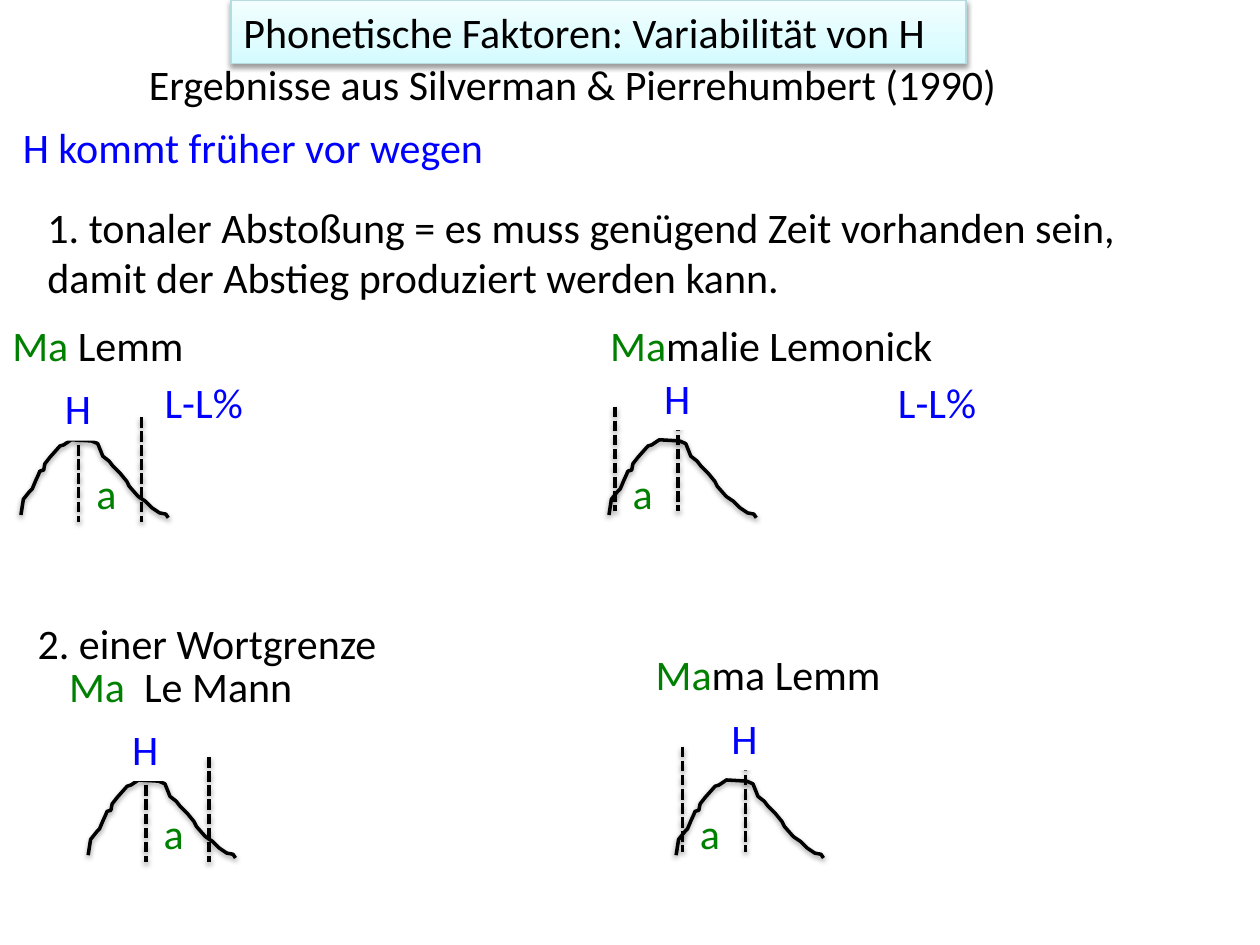
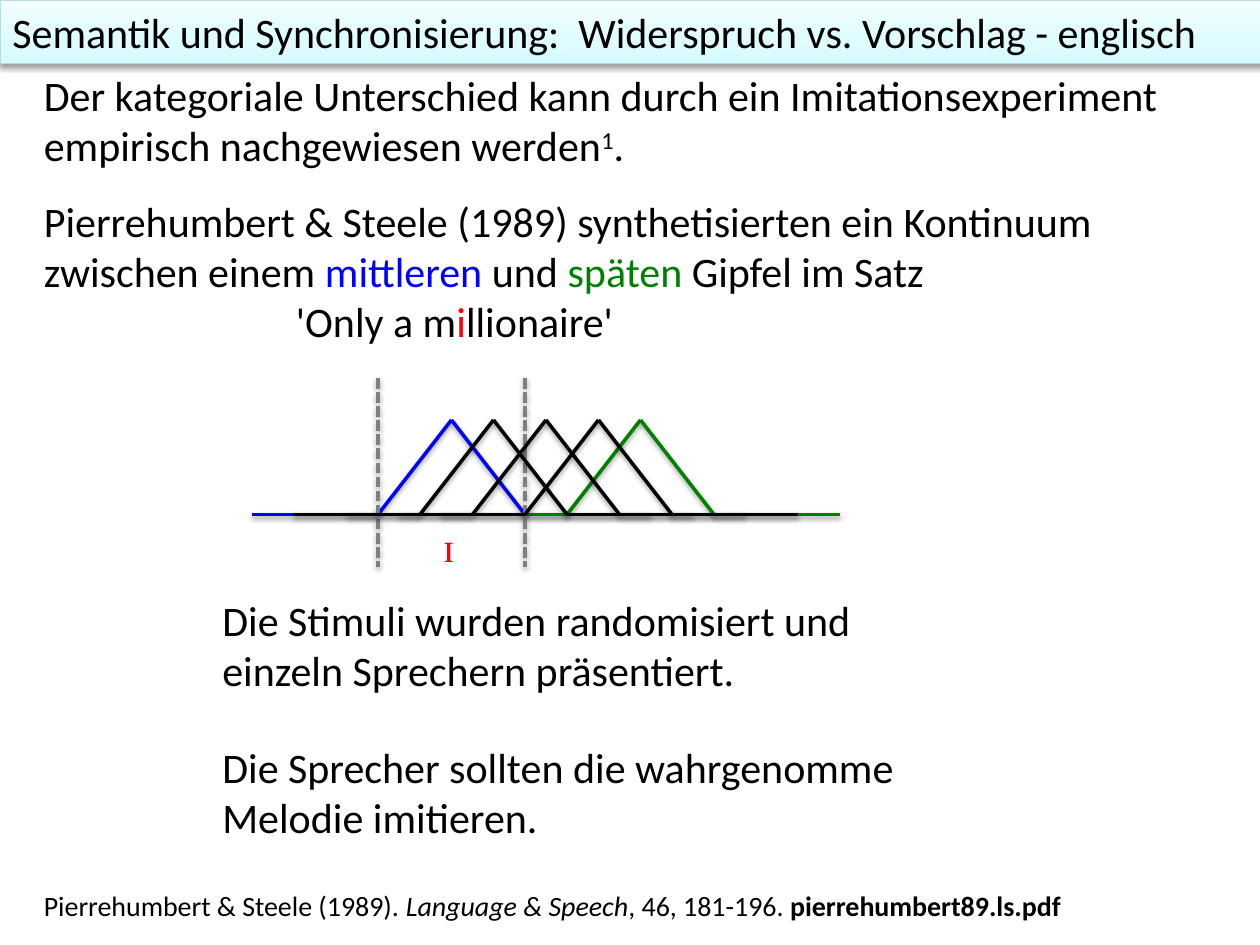
from dataclasses import dataclass

import pptx
import pptx.dml.color
import pptx.enum.dml
import pptx.enum.shapes
import pptx.enum.text
import pptx.oxml
import pptx.oxml.ns
import pptx.util

Pt = pptx.util.Pt
DRAWING_NS = pptx.oxml.ns.nsdecls("a")


@dataclass(frozen=True)
class Theme:
    black: str = "000000"
    white: str = "FFFFFF"
    blue: str = "0000FF"
    green: str = "008000"
    red: str = "FF0000"
    grey: str = "808080"
    band_edge: str = "B6DCDF"
    band_stops: tuple = ((0, "D3FBFF"), (35, "DFFCFF"), (100, "F2FEFF"))
    font: str = "Calibri"
    phonetic_font: str = "Times New Roman"
    body: int = 24
    source: int = 16
    stroke: float = 2
    band_stroke: float = 0.75


THEME = Theme()
LINE_HEIGHT = 36.5
BASELINE, PEAK_LEVEL = 294, 240
PITCH_CURVE = (
    (0, 43), (1.4, 34), (5, 29.5), (6.5, 28), (8.6, 23), (10, 20), (10.8, 18),
    (13, 17.3), (13.7, 13.7), (16.6, 10), (22.3, 3.6), (24.5, 2.9), (28.8, 0),
    (40.3, 0.7), (43.9, 2.2), (46.8, 9.4), (50.4, 12.2), (52.6, 15.1),
    (56.9, 19.4), (60.5, 23.8), (61.9, 26.6), (67, 32.4), (71.3, 35.3),
    (74.9, 38.9), (79.2, 41.8), (82.8, 42.5), (84.2, 44.6),
)


def rgb(code):
    return pptx.dml.color.RGBColor.from_string(code)


class Deck:
    def __init__(self, theme):
        self.theme = theme
        self.presentation = pptx.Presentation()
        self.presentation.slide_width = Pt(720)
        self.presentation.slide_height = Pt(540)
        self.slide = None

    def new_slide(self):
        blank = self.presentation.slide_layouts[6]
        self.slide = self.presentation.slides.add_slide(blank)

    def set_wording(self, shape, paragraphs, color=None, size=None, font=None):
        frame = shape.text_frame
        frame.word_wrap = True
        frame.vertical_anchor = pptx.enum.text.MSO_ANCHOR.TOP
        for index, runs in enumerate(paragraphs):
            paragraph = frame.add_paragraph() if index else frame.paragraphs[0]
            paragraph.alignment = pptx.enum.text.PP_ALIGN.LEFT
            paragraph.font.name = font or self.theme.font
            paragraph.font.size = Pt(size or self.theme.body)
            paragraph.font.color.rgb = rgb(color or self.theme.black)
            for part in [runs] if isinstance(runs, str) else runs:
                wording, look = (part, {}) if isinstance(part, str) else part
                run = paragraph.add_run()
                run.text = wording
                if "color" in look:
                    run.font.color.rgb = rgb(look["color"])
                if "italic" in look:
                    run.font.italic = True
                if "bold" in look:
                    run.font.bold = True
                if "raised" in look:
                    run._r.get_or_add_rPr().set("baseline", "30000")
        return frame

    def text(self, left, top, width, *paragraphs, lines=1, **style):
        height = LINE_HEIGHT + 29 * (lines - 1)
        box = self.slide.shapes.add_textbox(Pt(left), Pt(top), Pt(width), Pt(height))
        return self.set_wording(box, paragraphs, **style)

    def rectangle(self, left, top, width, height):
        return self.slide.shapes.add_shape(
            pptx.enum.shapes.MSO_SHAPE.RECTANGLE,
            Pt(left), Pt(top), Pt(width), Pt(height))

    def cast_shadow(self, shape):
        shape._element.spPr.append(pptx.oxml.parse_xml(
            f'<a:effectLst {DRAWING_NS}><a:outerShdw blurRad="{Pt(3.1)}" dist="{Pt(1.6)}" '
            f'dir="5400000" rotWithShape="0"><a:srgbClr val="{self.theme.black}">'
            '<a:alpha val="38000"/></a:srgbClr></a:outerShdw></a:effectLst>'))

    def title_band(self, left, width, wording):
        band = self.rectangle(left, 0, width, LINE_HEIGHT)
        stops = "".join(
            f'<a:gs pos="{share * 1000}"><a:srgbClr val="{color}"/></a:gs>'
            for share, color in self.theme.band_stops)
        band._element.spPr.append(pptx.oxml.parse_xml(
            f'<a:gradFill {DRAWING_NS} rotWithShape="1"><a:gsLst>{stops}</a:gsLst>'
            '<a:lin ang="16200000" scaled="0"/></a:gradFill>'))
        band.line.color.rgb = rgb(self.theme.band_edge)
        band.line.width = Pt(self.theme.band_stroke)
        self.cast_shadow(band)
        self.set_wording(band, [wording])

    def tone(self, left, top, wording):
        plate = self.rectangle(left, top, 30, LINE_HEIGHT)
        plate.shadow.inherit = False
        plate.fill.solid()
        plate.fill.fore_color.rgb = rgb(self.theme.white)
        plate.line.fill.background()
        self.set_wording(plate, [wording], color=self.theme.blue)

    def line(self, start, end, color=None, dashed=False):
        stroke = self.slide.shapes.add_connector(
            pptx.enum.shapes.MSO_CONNECTOR.STRAIGHT,
            *(Pt(value) for value in (*start, *end)))
        stroke.line.color.rgb = rgb(color or self.theme.black)
        stroke.line.width = Pt(self.theme.stroke)
        if dashed:
            stroke.line.dash_style = pptx.enum.dml.MSO_LINE.SQUARE_DOT
        self.cast_shadow(stroke)

    def pitch_curve(self, left, top):
        points = [(Pt(x), Pt(y)) for x, y in PITCH_CURVE]
        builder = self.slide.shapes.build_freeform(*points[0])
        builder.add_line_segments(points[1:], close=False)
        curve = builder.convert_to_shape(Pt(left), Pt(top))
        curve.fill.background()
        curve.line.color.rgb = rgb(self.theme.black)
        curve.line.width = Pt(self.theme.stroke)
        self.cast_shadow(curve)

    def vowel_figure(self, left, top, vowel_start, peak, rise):
        for boundary in (vowel_start, vowel_start + 36):
            x = left + boundary
            self.line((x, top - rise), (x, top - rise + 60), dashed=True)
        self.pitch_curve(left, top)
        self.tone(left + peak - 15, top - rise - 23, "H")
        self.text(left + vowel_start + 3, top + 12.3, 36, "a", color=self.theme.green)

    def stimulus(self, start, color=None):
        feet = start + 72, start + 156
        peak = start + 114, PEAK_LEVEL
        self.line((start, BASELINE), (feet[0], BASELINE), color)
        for foot in feet:
            self.line((foot, BASELINE), peak, color)
        self.line((feet[1], BASELINE), (start + 228, BASELINE), color)


def variability_slide(deck):
    theme = deck.theme
    stressed = ("Ma", {"color": theme.green})
    deck.new_slide()
    deck.title_band(132, 420, "Phonetische Faktoren: Variabilität von H")
    deck.text(6, 66, 576, "H kommt früher vor wegen", color=theme.blue)
    deck.text(14.4, 349.2, 588, "2. einer Wortgrenze")
    for left, top, width, rest in (
        (341.6, 179.3, 216, "malie Lemonick"),
        (0, 179.3, 113, " Lemm"),
        (367.6, 367.2, 150, "ma Lemm"),
        (32.4, 373.7, 143, "  Le Mann"),
    ):
        deck.text(left, top, width, [stressed, rest])
    for left, top in ((12, 251.3), (50.4, 445.7)):
        deck.vowel_figure(left, top, vowel_start=33, peak=33, rise=13)
        deck.vowel_figure(left + 336, top, vowel_start=3.5, peak=39.5, rise=19)
    deck.text(78, 30.2, 540, "Ergebnisse aus Silverman & Pierrehumbert (1990)")
    for left in (87, 506):
        deck.text(left, 211.7, 63, "L-L%", color=theme.blue)
    deck.text(20, 111.6, 652,
              "1. tonaler Abstoßung = es muss genügend Zeit vorhanden sein, "
              "damit der Abstieg produziert werden kann.", lines=2)


def synchronisation_slide(deck):
    theme = deck.theme
    deck.new_slide()
    deck.text(18, 36, 684, [
        "Der kategoriale Unterschied kann durch ein Imitationsexperiment "
        "empirisch nachgewiesen werden", ("1", {"raised": True}), "."], lines=2)
    continuum = deck.text(
        18, 108, 702,
        ["Pierrehumbert & Steele (1989) synthetisierten ein Kontinuum zwischen einem ",
         ("mittleren", {"color": theme.blue}), " und",
         (" späten ", {"color": theme.green}), "Gipfel im Satz"],
        ["'Only a m", ("i", {"color": theme.red}), "llionaire'"], lines=3)
    example = continuum.paragraphs[1]._p.get_or_add_pPr()
    example.set("marL", str(Pt(144)))
    example.set("indent", "0")

    deck.stimulus(144, theme.blue)
    deck.stimulus(252, theme.green)
    for boundary in (216, 300):
        deck.line((boundary, 216), (boundary, 324), theme.grey, dashed=True)
    for start in (168, 198, 228):
        deck.stimulus(start)
    deck.text(246, 294, 30, "ɪ", color=theme.red, font=theme.phonetic_font)

    deck.text(120, 336, 390,
              "Die Stimuli wurden randomisiert und einzeln Sprechern präsentiert.", lines=2)
    deck.text(120, 420, 438,
              "Die Sprecher sollten die wahrgenomme Melodie imitieren.", lines=2)
    deck.text(18, 504, 618, [
        "Pierrehumbert & Steele (1989). ", ("Language & Speech", {"italic": True}),
        ", 46, 181-196. ", ("pierrehumbert89.ls.pdf", {"bold": True})], size=theme.source)
    deck.title_band(
        0, 729, "Semantik und Synchronisierung:  Widerspruch vs. Vorschlag - englisch")


def main():
    deck = Deck(THEME)
    variability_slide(deck)
    synchronisation_slide(deck)
    deck.presentation.save("out.pptx")


if __name__ == "__main__":
    main()
